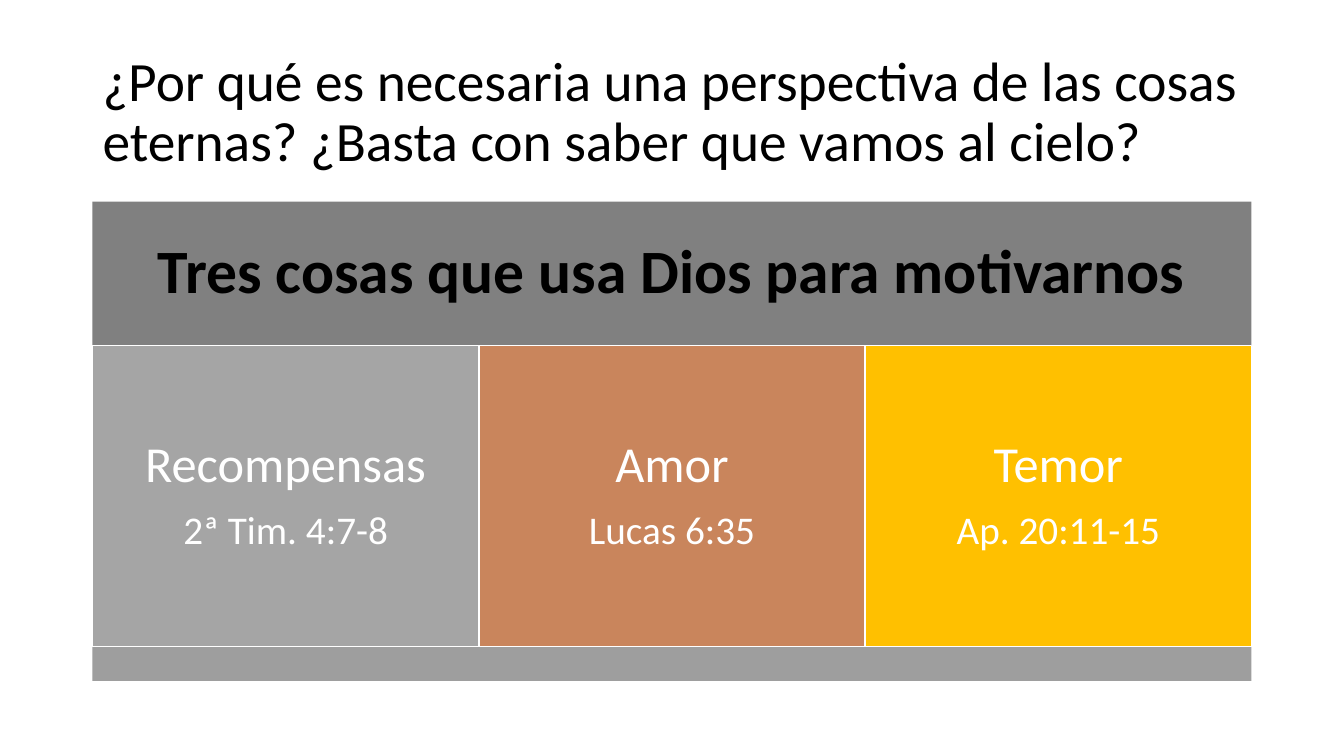
import pptx
import pptx.util
import pptx.dml.color
import pptx.enum.shapes
import pptx.enum.text

Cm, Pt = pptx.util.Cm, pptx.util.Pt
ALIGN = pptx.enum.text.PP_ALIGN

TITLE = ("¿Por qué es necesaria una perspectiva de las cosas eternas? "
         "¿Basta con saber que vamos al cielo?")
HEADING = "Tres cosas que usa Dios para motivarnos"
MOTIVES = [
    ("Recompensas", "2ª Tim. 4:7-8", "gray"),
    ("Amor", "Lucas 6:35", "copper"),
    ("Temor", "Ap. 20:11-15", "gold"),
]
COLORS = {
    "black": "000000", "white": "FFFFFF", "band": "808080", "foot": "9E9E9E",
    "gray": "A5A5A5", "copper": "C9855C", "gold": "FFC000",
}
FONT = "Calibri"
LEFT, WIDTH = 2.33, 29.21
TITLE_TOP, TITLE_H = 1.01, 3.68
BAND_TOP, BAND_H = 5.08, 3.62
PANEL_H, FOOT_H = 7.61, 0.85


def rgb(name):
    return pptx.dml.color.RGBColor.from_string(COLORS[name])


def write(s, lines, color, align, inset=None):
    """Fill a shape with one paragraph per (text, size, bold, space after)."""
    tf = s.text_frame
    tf.word_wrap = True
    tf.auto_size = pptx.enum.text.MSO_AUTO_SIZE.NONE
    tf.vertical_anchor = pptx.enum.text.MSO_ANCHOR.MIDDLE
    if inset is not None:
        tf.margin_left = tf.margin_right = Cm(inset)
        tf.margin_top = tf.margin_bottom = Cm(inset)
    for i, (text, size, bold, after) in enumerate(lines):
        p = tf.add_paragraph() if i else tf.paragraphs[0]
        p.alignment = align
        p.line_spacing = 0.9
        p.space_after = Pt(after)
        r = p.add_run()
        r.text = text
        r.font.name = FONT
        r.font.size = Pt(size)
        r.font.bold = bold
        r.font.color.rgb = rgb(color)


def add_block(slide, left, top, width, height, fill, outlined=False):
    s = slide.shapes.add_shape(pptx.enum.shapes.MSO_SHAPE.RECTANGLE,
                               Cm(left), Cm(top), Cm(width), Cm(height))
    s.shadow.inherit = False
    s.fill.solid()
    s.fill.fore_color.rgb = rgb(fill)
    if outlined:
        s.line.color.rgb = rgb("white")
        s.line.width = Pt(1)
    else:
        s.line.fill.background()
    return s


def main():
    prs = pptx.Presentation()
    prs.slide_width, prs.slide_height = Cm(33.87), Cm(19.05)
    slide = prs.slides.add_slide(prs.slide_layouts[5])

    title = slide.shapes.title
    title.left, title.top = Cm(LEFT), Cm(TITLE_TOP)
    title.width, title.height = Cm(WIDTH), Cm(TITLE_H)
    write(title, [(TITLE, 39.6, False, 0)], "black", ALIGN.LEFT)

    band = add_block(slide, LEFT, BAND_TOP, WIDTH, BAND_H, "band")
    write(band, [(HEADING, 44, True, 0)], "black", ALIGN.CENTER, 0.46)

    panel_top = BAND_TOP + BAND_H
    panel_w = WIDTH / len(MOTIVES)
    for i, (motive, verse, fill) in enumerate(MOTIVES):
        panel = add_block(slide, LEFT + i * panel_w, panel_top, panel_w, PANEL_H,
                          fill, outlined=True)
        write(panel, [(motive, 36, False, 12.6), (verse, 28, False, 0)],
              "white", ALIGN.CENTER, 0.38)

    add_block(slide, LEFT, panel_top + PANEL_H, WIDTH, FOOT_H, "foot")
    prs.save("out.pptx")


if __name__ == "__main__":
    main()
